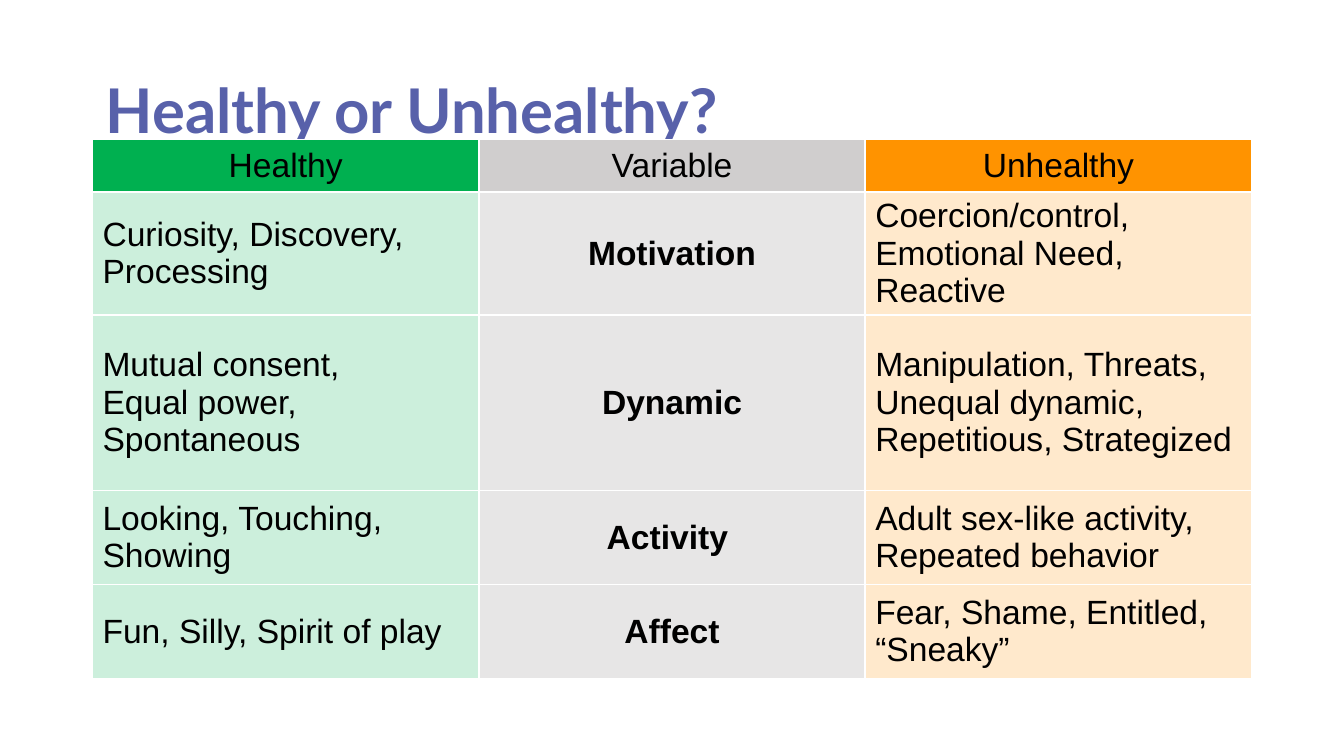
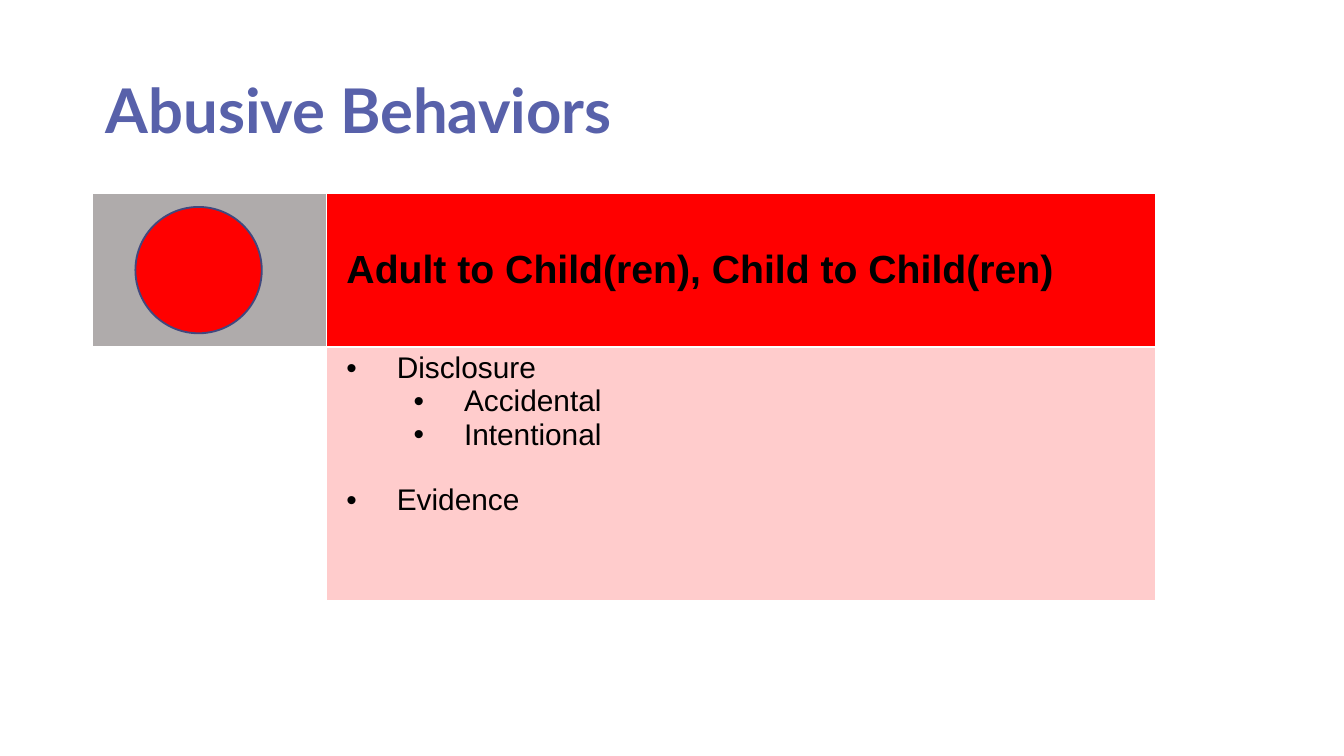
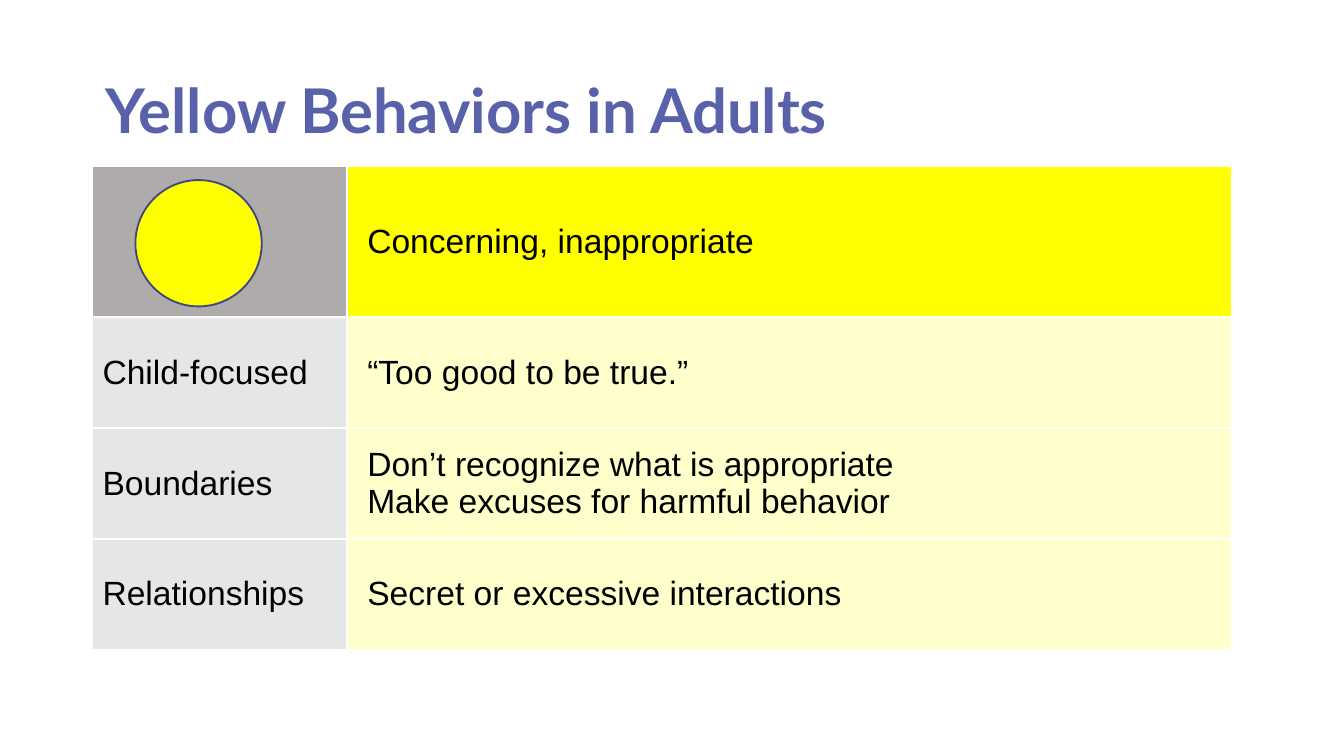
import pptx
import pptx.dml.color
import pptx.enum.shapes
import pptx.enum.text
import pptx.oxml
import pptx.oxml.ns
import pptx.util
from lxml import etree

SLIDE_WIDTH = pptx.util.Inches(10)
SLIDE_HEIGHT = pptx.util.Inches(5.625)
UNIT = SLIDE_WIDTH / 100
MARGIN = 6.88

INK = "000000"
WHITE = "FFFFFF"
TITLE_INK = "5861AA"
OUTLINE = "41487E"
GREEN = "00B050"
ORANGE = "FF9300"
RED = "FF0000"
YELLOW = "FFFF00"
HEADER_GRAY = "D0CECE"
LABEL_GRAY = "E7E6E6"
LIGHT_GRAY = "AFABAB"

LEFT = pptx.enum.text.PP_ALIGN.LEFT
CENTER = pptx.enum.text.PP_ALIGN.CENTER
MIDDLE = pptx.enum.text.MSO_ANCHOR.MIDDLE
TOP = pptx.enum.text.MSO_ANCHOR.TOP


def grid(*lengths):
    return [round(length * UNIT) for length in lengths]


def paint(fill, color, opacity=100):
    fill.solid()
    fill.fore_color.rgb = pptx.dml.color.RGBColor.from_string(color)
    if opacity < 100:
        solid = fill._xPr.find(pptx.oxml.ns.qn("a:solidFill"))
        alpha = etree.SubElement(solid[0], pptx.oxml.ns.qn("a:alpha"))
        alpha.set("val", str(opacity * 1000))


def write(frame, text, size=18, font="Arial", color=INK, bold=False,
          align=LEFT, spacing=None, levels=None, gaps=None):
    for index, line in enumerate(text.split("\n")):
        paragraph = frame.paragraphs[0] if index == 0 else frame.add_paragraph()
        paragraph.text = line
        paragraph.alignment = align
        if spacing:
            paragraph.line_spacing = spacing
        if gaps and index in gaps:
            paragraph.space_before = pptx.util.Pt(gaps[index])
        if levels:
            add_bullet(paragraph, levels[index])
        for run in paragraph.runs:
            run.font.name = font
            run.font.size = pptx.util.Pt(size)
            run.font.bold = bold
            paint(run.font.fill, color)


def add_bullet(paragraph, level):
    paragraph.level = level
    properties = paragraph._p.get_or_add_pPr()
    properties.set("marL", str(pptx.util.Inches(0.375 + 0.5 * level)))
    properties.set("indent", str(-pptx.util.Inches(0.375)))
    etree.SubElement(properties, pptx.oxml.ns.qn("a:buFont")).set("typeface", "Arial")
    etree.SubElement(properties, pptx.oxml.ns.qn("a:buChar")).set("char", "•")


def add_borders(cell):
    properties = cell._tc.get_or_add_tcPr()
    for side in "LRTB":
        border = etree.SubElement(properties, pptx.oxml.ns.qn(f"a:ln{side}"))
        border.set("w", str(pptx.util.Pt(1)))
        solid = etree.SubElement(border, pptx.oxml.ns.qn("a:solidFill"))
        etree.SubElement(solid, pptx.oxml.ns.qn("a:srgbClr")).set("val", WHITE)


def fill_cell(cell, text="", color=None, opacity=100, inset=0.75,
              anchor=MIDDLE, **text_format):
    add_borders(cell)
    if color:
        paint(cell.fill, color, opacity)
    else:
        cell.fill.background()
    cell.margin_left, cell.margin_right = grid(inset, 0.75)
    cell.margin_top, cell.margin_bottom = grid(0.38, 0.38)
    cell.vertical_anchor = anchor
    if text:
        write(cell.text_frame, text, **text_format)


def add_grid_table(slide, top, widths, heights):
    box = grid(MARGIN, top, sum(widths), sum(heights))
    table = slide.shapes.add_table(len(heights), len(widths), *box).table
    table.first_row = table.horz_banding = False
    for column, width in zip(table.columns, grid(*widths)):
        column.width = width
    for row, height in zip(table.rows, grid(*heights)):
        row.height = height
    return table


def add_titled_slide(deck, heading):
    slide = deck.slides.add_slide(deck.slide_layouts[5])
    title = slide.shapes.title
    title.left, title.top, title.width, title.height = grid(MARGIN, 3, 86.25, 10.9)
    frame = title.text_frame
    frame.margin_left, frame.margin_right = grid(1, 1)
    frame.vertical_anchor = MIDDLE
    write(frame, heading, size=33, font="Lato", color=TITLE_INK, bold=True, spacing=0.9)
    return slide


def add_signal_light(slide, table_top, color):
    light = slide.shapes.add_shape(pptx.enum.shapes.MSO_SHAPE.OVAL,
                                   *grid(MARGIN + 3.2, table_top + 1, 9.4, 9.4))
    light.shadow.inherit = False
    paint(light.fill, color)
    paint(light.line.fill, OUTLINE)
    light.line.width = pptx.util.Pt(1)


def add_comparison(deck):
    slide = add_titled_slide(deck, "Healthy or Unhealthy?")
    headings = (("Healthy", GREEN), ("Variable", HEADER_GRAY), ("Unhealthy", ORANGE))
    variables = (
        ("Curiosity, Discovery, Processing", "Motivation",
         "Coercion/control, \vEmotional Need,\nReactive"),
        ("Mutual consent,\vEqual power, Spontaneous", "Dynamic",
         "Manipulation, Threats,\vUnequal dynamic, \vRepetitious, Strategized"),
        ("Looking, Touching, Showing", "Activity ",
         "Adult sex-like activity,\nRepeated behavior"),
        ("Fun, Silly, Spirit of play", "Affect", "Fear, Shame, Entitled, “Sneaky”"),
    )
    table = add_grid_table(slide, 10.38, [86.25 / 3] * 3, [3.9, 7, 13.05, 7, 7])
    for column, (heading, color) in enumerate(headings):
        fill_cell(table.cell(0, column), heading, color, align=CENTER)
    for row, (healthy, variable, unhealthy) in enumerate(variables, 1):
        fill_cell(table.cell(row, 0), healthy, GREEN, 20)
        fill_cell(table.cell(row, 1), variable, LABEL_GRAY, bold=True, align=CENTER)
        fill_cell(table.cell(row, 2), unhealthy, ORANGE, 20)


def add_signal_table(slide, top, widths, heights, color, heading, **heading_format):
    table = add_grid_table(slide, top, widths, heights)
    fill_cell(table.cell(0, 0), color=LIGHT_GRAY)
    fill_cell(table.cell(0, 1), heading, color, inset=1.5, **heading_format)
    add_signal_light(slide, top, color)
    return table


def add_abusive_behaviors(deck):
    slide = add_titled_slide(deck, "Abusive Behaviors")
    table = add_signal_table(slide, 14.4, [17.4, 61.7], [11.4, 18.9], RED,
                             "Adult to Child(ren), Child to Child(ren)", size=21, bold=True)
    fill_cell(table.cell(1, 0))
    fill_cell(table.cell(1, 1), "Disclosure\nAccidental\nIntentional\nEvidence", RED, 20,
              inset=1.5, anchor=TOP, size=16, levels=(0, 1, 1, 0), gaps={3: 17.5})


def add_yellow_behaviors(deck):
    slide = add_titled_slide(deck, "Yellow Behaviors in Adults")
    behaviors = (
        ("Child-focused", "“Too good to be true.”"),
        ("Boundaries", "Don’t recognize what is appropriate\nMake excuses for harmful behavior"),
        ("Relationships", "Secret or excessive interactions"),
    )
    table = add_signal_table(slide, 12.4, [18.95, 65.85], [11.2] + [8.25] * 3, YELLOW,
                             "Concerning, inappropriate")
    for row, (behavior, signs) in enumerate(behaviors, 1):
        fill_cell(table.cell(row, 0), behavior, LABEL_GRAY)
        fill_cell(table.cell(row, 1), signs, YELLOW, 20, inset=1.5)


def main():
    deck = pptx.Presentation()
    deck.slide_width = SLIDE_WIDTH
    deck.slide_height = SLIDE_HEIGHT
    add_comparison(deck)
    add_abusive_behaviors(deck)
    add_yellow_behaviors(deck)
    deck.save("out.pptx")


if __name__ == "__main__":
    main()
